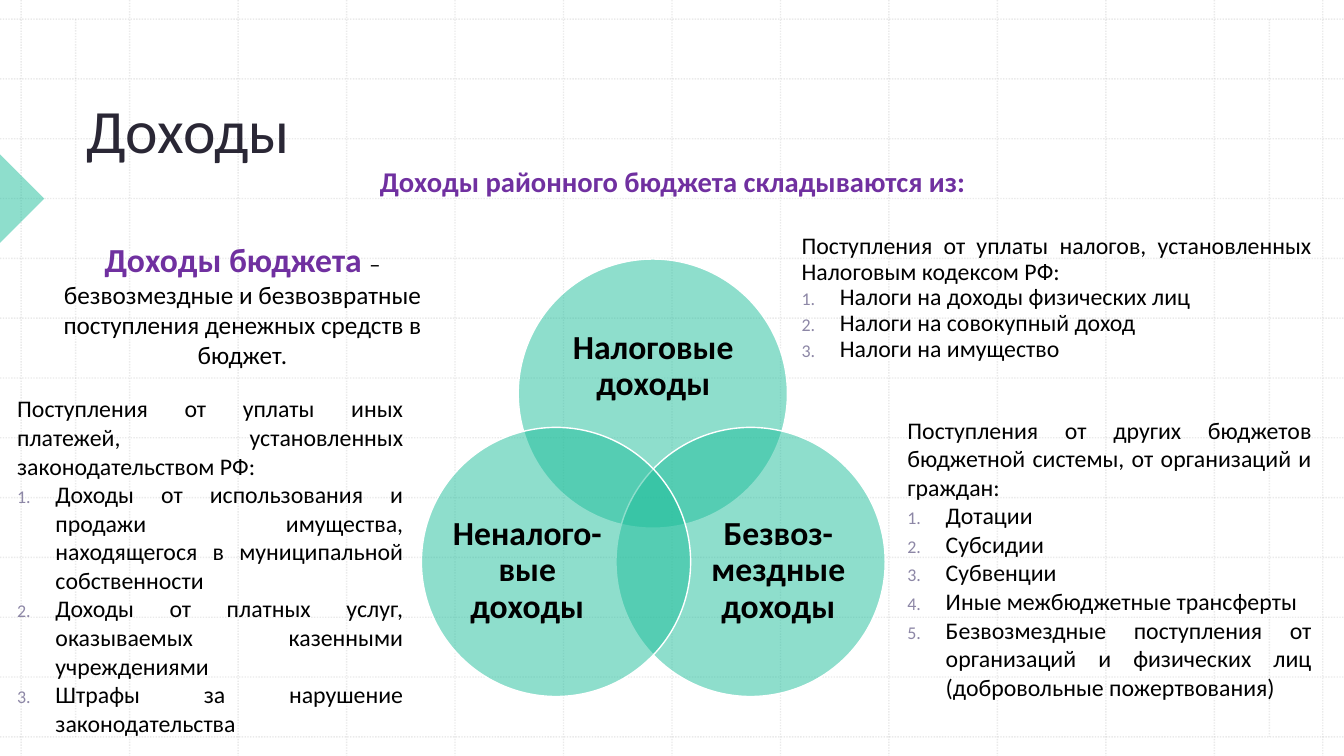
"""Build the slide on the sources of district budget revenue."""
from dataclasses import dataclass

from lxml.etree import SubElement
from pptx import Presentation
from pptx.dml.color import RGBColor
from pptx.enum.dml import MSO_LINE
from pptx.enum.shapes import MSO_CONNECTOR, MSO_SHAPE
from pptx.enum.text import MSO_ANCHOR, MSO_AUTO_SIZE, PP_ALIGN
from pptx.oxml.ns import qn
from pptx.util import Inches, Pt


@dataclass(frozen=True)
class Theme:
    font: str = "Calibri"
    ink: str = "000000"
    title: str = "2A2735"
    accent: str = "7030A0"
    teal: str = "1EBE9B"
    outline: str = "FFFFFF"
    grid: str = "BCBCBC"
    number: str = "8D87A6"
    title_size: float = 44
    large_size: float = 24
    heading_size: float = 20.4
    body_size: float = 18
    list_size: float = 17
    dash_size: float = 16


theme = Theme()


def make_translucent(shape, percent):
    color = shape.element.find(".//" + qn("a:srgbClr"))
    SubElement(color, qn("a:alpha"), val=str(percent * 1000))


def write(shape, box, paragraphs, align, anchor=MSO_ANCHOR.TOP, spacing=1.0, inset=None):
    for name, value in zip(("left", "top", "width", "height"), box):
        setattr(shape, name, Inches(value))
    frame = shape.text_frame
    frame_format = {"word_wrap": True, "auto_size": MSO_AUTO_SIZE.NONE, "vertical_anchor": anchor}
    if inset is not None:
        for side in ("left", "top", "right", "bottom"):
            frame_format[f"margin_{side}"] = Inches(inset)
    for name, value in frame_format.items():
        setattr(frame, name, value)
    for index, (runs, numbered) in enumerate(paragraphs):
        paragraph = frame.add_paragraph() if index else frame.paragraphs[0]
        properties = paragraph._p.get_or_add_pPr()
        indent = Inches(0.38) if numbered else 0
        properties.set("marL", str(indent))
        properties.set("indent", str(-indent))
        if numbered:
            number_color = SubElement(properties, qn("a:buClr"))
            SubElement(number_color, qn("a:srgbClr"), val=theme.number)
            SubElement(properties, qn("a:buSzPct"), val="75000")
            SubElement(properties, qn("a:buFont"), typeface=theme.font)
            SubElement(properties, qn("a:buAutoNum"), type="arabicPeriod")
        else:
            SubElement(properties, qn("a:buNone"))
        paragraph_format = {"alignment": align, "line_spacing": spacing,
                            "space_before": Pt(0), "space_after": Pt(0)}
        for name, value in paragraph_format.items():
            setattr(paragraph, name, value)
        for text, size, color, bold in runs:
            run = paragraph.add_run()
            run.text = text
            font_format = {"name": theme.font, "size": Pt(size), "bold": bold}
            for name, value in font_format.items():
                setattr(run.font, name, value)
            run.font.color.rgb = RGBColor.from_string(color)


presentation = Presentation()
presentation.slide_width = Inches(13.33)
presentation.slide_height = Inches(7.5)
slide = presentation.slides.add_slide(presentation.slide_layouts[4])
shapes = slide.shapes
title, definition, *lists = list(slide.placeholders)

grid_lines = []
for step in range(13):
    x = 0.21 + step * 12.91 / 12
    y = 0.19 + step * 7.12 / 12
    grid_lines += [(x, 0, x, 7.5), (0, y, 13.33, y)]
grid_lines += [(x, 0.19, x, 7.31) for x in (0.75, 12.59)]
for ends in grid_lines:
    connector = shapes.add_connector(MSO_CONNECTOR.STRAIGHT, *map(Inches, ends))
    connector.line.color.rgb = RGBColor.from_string(theme.grid)
    connector.line.width = Pt(1)
    connector.line.dash_style = MSO_LINE.ROUND_DOT
    make_translucent(connector, 30)
    SubElement(connector.element.spPr, qn("a:effectLst"))

marker = shapes.add_shape(MSO_SHAPE.RIGHT_TRIANGLE, *map(Inches, (-0.31, 1.66, 0.62, 0.62)))
marker.rotation = 225
marker.shadow.inherit = False
marker.fill.solid()
marker.fill.fore_color.rgb = RGBColor.from_string(theme.teal)
marker.line.fill.background()
make_translucent(marker, 50)

for placeholder in (title, definition, *lists):
    shapes.element.append(placeholder.element)

write(title, (0.76, 0.79, 11.29, 0.91),
      [([("Доходы", theme.title_size, theme.title, False)], False)],
      PP_ALIGN.LEFT, MSO_ANCHOR.BOTTOM)

revenue_circles = [
    ((5.14, 2.57), (5.5, 3.04, 1.96, 1.2), "Налоговые доходы"),
    ((6.11, 4.24), (6.92, 4.93, 1.6, 1.47), "Безвоз-мездные доходы"),
    ((4.18, 4.24), (4.43, 4.93, 1.6, 1.47), "Неналого-вые доходы"),
]
for corner, label_box, label in revenue_circles:
    circle = shapes.add_shape(MSO_SHAPE.OVAL, *map(Inches, (*corner, 2.67, 2.67)))
    circle.shadow.inherit = False
    circle.fill.solid()
    circle.fill.fore_color.rgb = RGBColor.from_string(theme.teal)
    circle.line.color.rgb = RGBColor.from_string(theme.outline)
    circle.line.width = Pt(1)
    make_translucent(circle, 50)
    label_text = shapes.add_textbox(*map(Inches, label_box))
    write(label_text, label_box, [([(label, theme.large_size, theme.ink, True)], False)],
          PP_ALIGN.CENTER, MSO_ANCHOR.MIDDLE, 0.9, 0)

definition_runs = [
    ("Доходы бюджета ", theme.large_size, theme.accent, True),
    ("– ", theme.dash_size, theme.ink, False),
    ("безвозмездные и безвозвратные поступления денежных средств в бюджет.",
     theme.body_size, theme.ink, False),
]
write(definition, (0.32, 2.32, 4.17, 1.5), [(definition_runs, False)], PP_ALIGN.CENTER)

revenue_lists = [
    ((7.85, 2.27, 5.26, 1.75), 0.9, [
        "Поступления от уплаты налогов, установленных Налоговым кодексом РФ:",
        "Налоги на доходы физических лиц",
        "Налоги на совокупный доход",
        "Налоги на имущество"]),
    ((0.07, 3.86, 4.03, 3.66), 1.0, [
        "Поступления от уплаты иных платежей, установленных законодательством РФ:",
        "Доходы от использования и продажи имущества, находящегося в муниципальной собственности",
        "Доходы от платных услуг, оказываемых казенными учреждениями",
        "Штрафы за нарушение законодательства"]),
    ((8.9, 4.07, 4.21, 3.35), 1.0, [
        "Поступления от других бюджетов бюджетной системы, от организаций и граждан:",
        "Дотации",
        "Субсидии",
        "Субвенции",
        "Иные межбюджетные трансферты",
        "Безвозмездные поступления от организаций и физических лиц (добровольные пожертвования)"]),
]
for placeholder, (box, spacing, lines) in zip(lists, revenue_lists):
    paragraphs = [([(line, theme.list_size, theme.ink, False)], index > 0)
                  for index, line in enumerate(lines)]
    write(placeholder, box, paragraphs, PP_ALIGN.JUSTIFY, spacing=spacing)

heading_box = (3.04, 1.58, 7.26, 0.54)
heading = shapes.add_textbox(*map(Inches, heading_box))
write(heading, heading_box,
      [([("Доходы районного бюджета складываются из:", theme.heading_size, theme.accent, True)], False)],
      PP_ALIGN.CENTER)

presentation.save("out.pptx")
